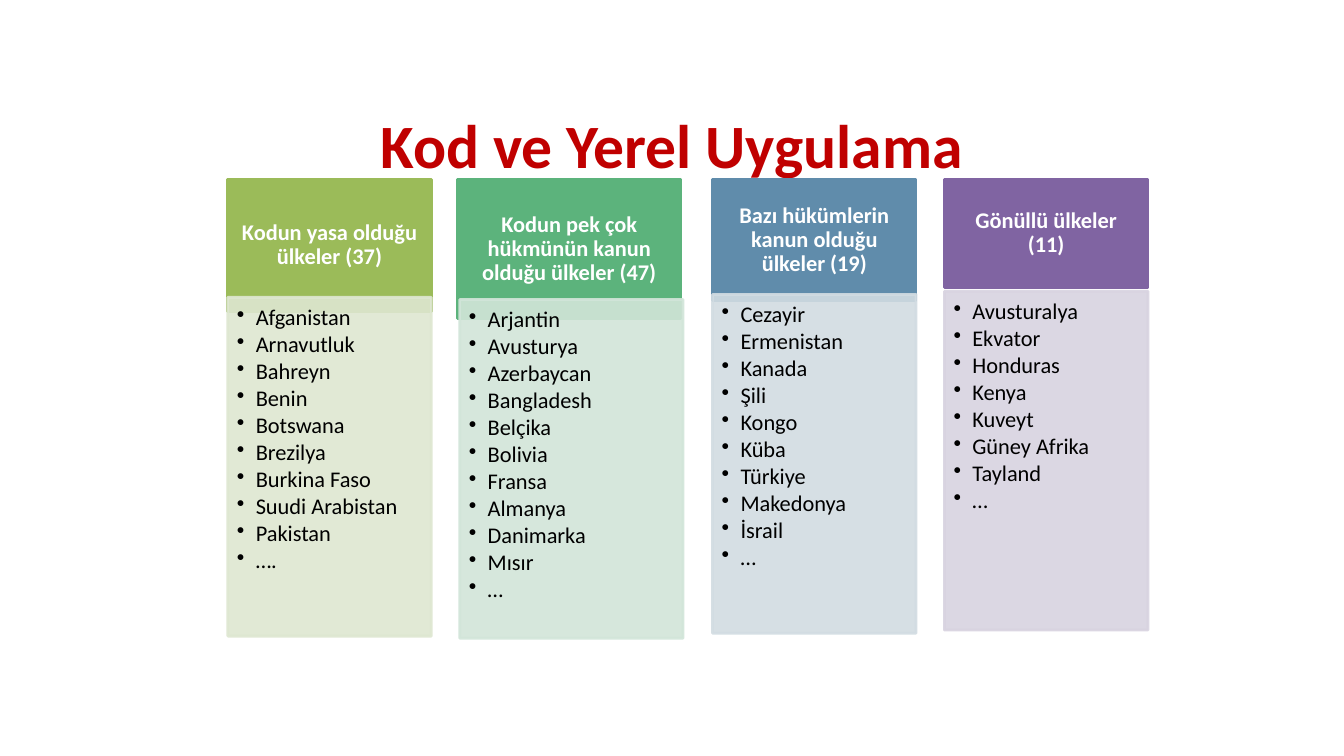
from dataclasses import dataclass

from lxml.etree import SubElement
from pptx import Presentation
from pptx.dml.color import RGBColor
from pptx.enum.shapes import MSO_SHAPE
from pptx.enum.text import MSO_ANCHOR, PP_ALIGN
from pptx.oxml.ns import qn
from pptx.util import Pt


@dataclass(frozen=True)
class Theme:
    face: str = "Calibri"
    title: str = "C00000"
    light: str = "FFFFFF"
    dark: str = "000000"
    big: float = 44
    small: float = 16
    edge: float = 2
    alpha: int = 90
    dent: float = 13.5


THEME = Theme()

GROUPS = [
    dict(name="Kodun yasa olduğu ülkeler (37)", box=(162.7, 145.4),
         head=94.3, drop=84.2, shift=0, tones=("9BBB59", "DEE7D1"),
         lands=["Afganistan", "Arnavutluk", "Bahreyn", "Benin", "Botswana", "Brezilya",
                "Burkina Faso", "Suudi Arabistan", "Pakistan", "…."]),
    dict(name="Kodun pek çok hükmünün kanun olduğu ülkeler (47)", box=(326.9, 159.5),
         head=99.4, drop=85.7, shift=1.5, tones=("5CB37C", "D2E5D9"),
         lands=["Arjantin", "Avusturya", "Azerbaycan", "Bangladesh", "Belçika", "Bolivia",
                "Fransa", "Almanya", "Danimarka", "Mısır", "…"]),
    dict(name="Bazı hükümlerin kanun olduğu ülkeler (19)", box=(509, 145.4),
         head=86.4, drop=82.1, shift=0, tones=("608CAB", "D2DCE2"),
         lands=["Cezayir", "Ermenistan", "Kanada", "Şili", "Kongo", "Küba", "Türkiye",
                "Makedonya", "İsrail", "…"]),
    dict(name="Gönüllü ülkeler (11)", box=(674.6, 145.4),
         head=77, drop=79.9, shift=0, tones=("8064A2", "D8D3E0"),
         lands=["Avusturalya", "Ekvator", "Honduras", "Kenya", "Kuveyt", "Güney Afrika",
                "Tayland", "…"]),
]
TOP = 128.2
DEPTH = 242


def assign(item, form):
    for key, value in form.items():
        setattr(item, key, value)


def set_font(para, size, tone, bold):
    assign(para.font, dict(name=THEME.face, size=Pt(size), bold=bold))
    para.font.color.rgb = RGBColor.from_string(tone)


def set_frame(frame, anchor, pads):
    sides = ("margin_left", "margin_top", "margin_right", "margin_bottom")
    form = dict(zip(sides, map(Pt, pads)))
    assign(frame, dict(form, word_wrap=True, vertical_anchor=anchor))


def add_panel(slide, box, tone):
    panel = slide.shapes.add_shape(MSO_SHAPE.RECTANGLE, *map(Pt, box))
    panel.shadow.inherit = False
    panel.fill.solid()
    panel.line.width = Pt(THEME.edge)
    for color in (panel.fill.fore_color, panel.line.color):
        color.rgb = RGBColor.from_string(tone)
    return panel


def fade(panel):
    for color in panel.element.spPr.iter(qn("a:srgbClr")):
        SubElement(color, qn("a:alpha"), val=str(THEME.alpha * 1000))


def add_title(slide, box, text):
    frame = slide.shapes.add_textbox(*map(Pt, box)).text_frame
    set_frame(frame, MSO_ANCHOR.MIDDLE, (7.2, 3.6, 7.2, 3.6))
    para = frame.paragraphs[0]
    assign(para, dict(text=text, alignment=PP_ALIGN.CENTER))
    set_font(para, THEME.big, THEME.title, True)


def add_head(slide, box, text, tone):
    frame = add_panel(slide, box, tone).text_frame
    set_frame(frame, MSO_ANCHOR.MIDDLE, (9, 5, 9, 5))
    para = frame.paragraphs[0]
    assign(para, dict(text=text, alignment=PP_ALIGN.CENTER,
                      line_spacing=0.9, space_after=Pt(5.6)))
    set_font(para, THEME.small, THEME.light, True)


def add_list(slide, box, lands, tone):
    panel = add_panel(slide, box, tone)
    fade(panel)
    frame = panel.text_frame
    set_frame(frame, MSO_ANCHOR.TOP, (6.5, 6.5, 9, 10))
    for spot, land in enumerate(lands):
        para = frame.add_paragraph() if spot else frame.paragraphs[0]
        assign(para, dict(text=land, alignment=PP_ALIGN.LEFT, level=1,
                          line_spacing=0.9, space_after=Pt(2)))
        props = para._p.get_or_add_pPr()
        props.set("marL", str(Pt(THEME.dent)))
        props.set("indent", str(-Pt(THEME.dent)))
        SubElement(props, qn("a:buChar"), char="•")
        set_font(para, THEME.small, THEME.dark, False)


def add_group(slide, box, group):
    left, top, width, depth = box
    dark, pale = group["tones"]
    add_head(slide, (left, top, width, group["head"]), group["name"], dark)
    add_list(slide, (left + group["shift"], top + group["drop"], width, depth),
             group["lands"], pale)


def main():
    deck = Presentation()
    assign(deck, dict(slide_width=Pt(960), slide_height=Pt(540)))
    slide = deck.slides.add_slide(deck.slide_layouts[6])
    add_title(slide, (48, 57.6, 864, 90), "Kod ve Yerel Uygulama")
    for group in GROUPS:
        left, width = group["box"]
        add_group(slide, (left, TOP, width, DEPTH), group)
    deck.save("out.pptx")


if __name__ == "__main__":
    main()
